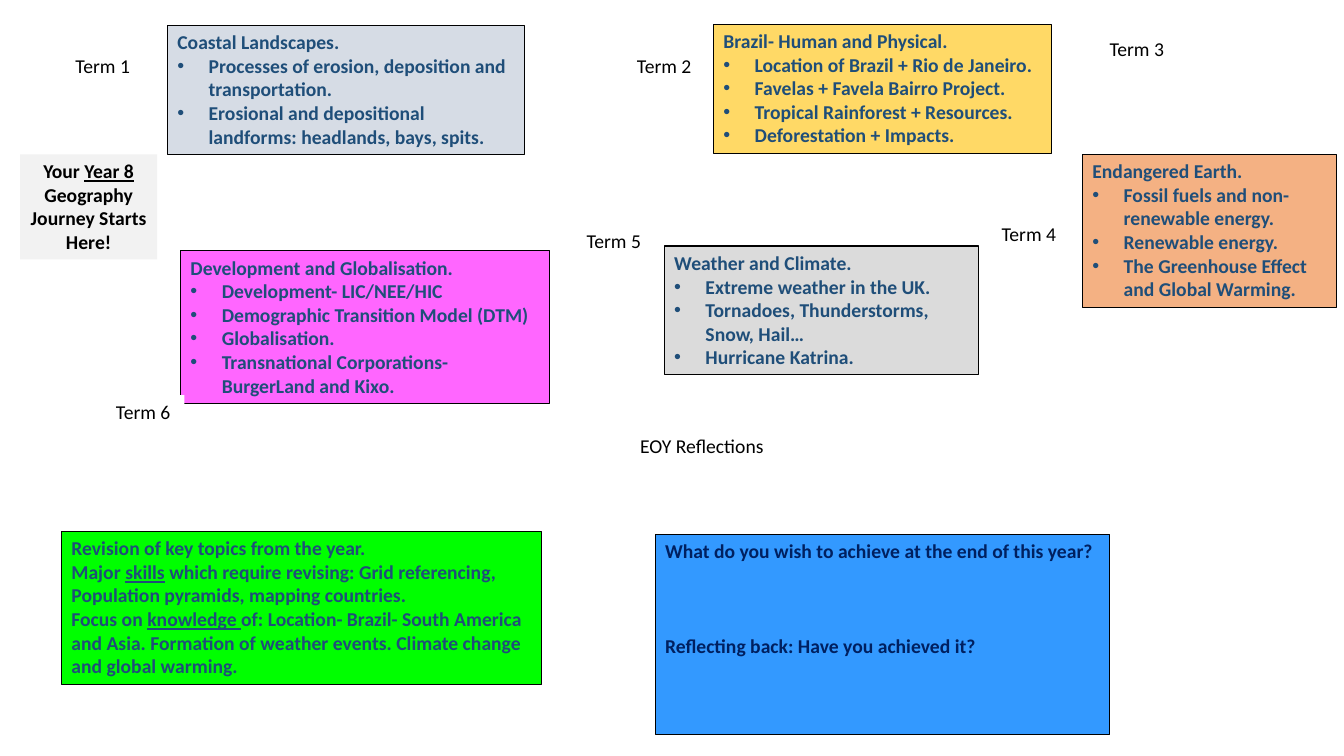
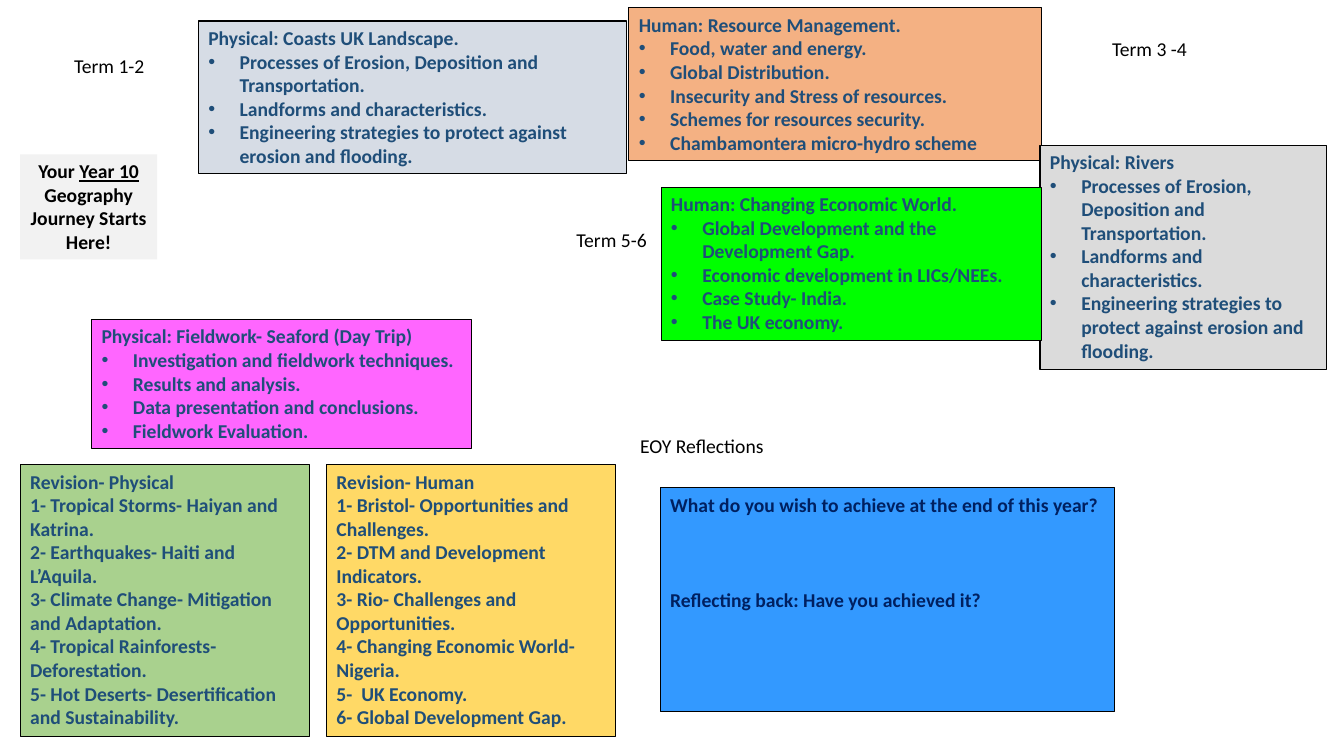
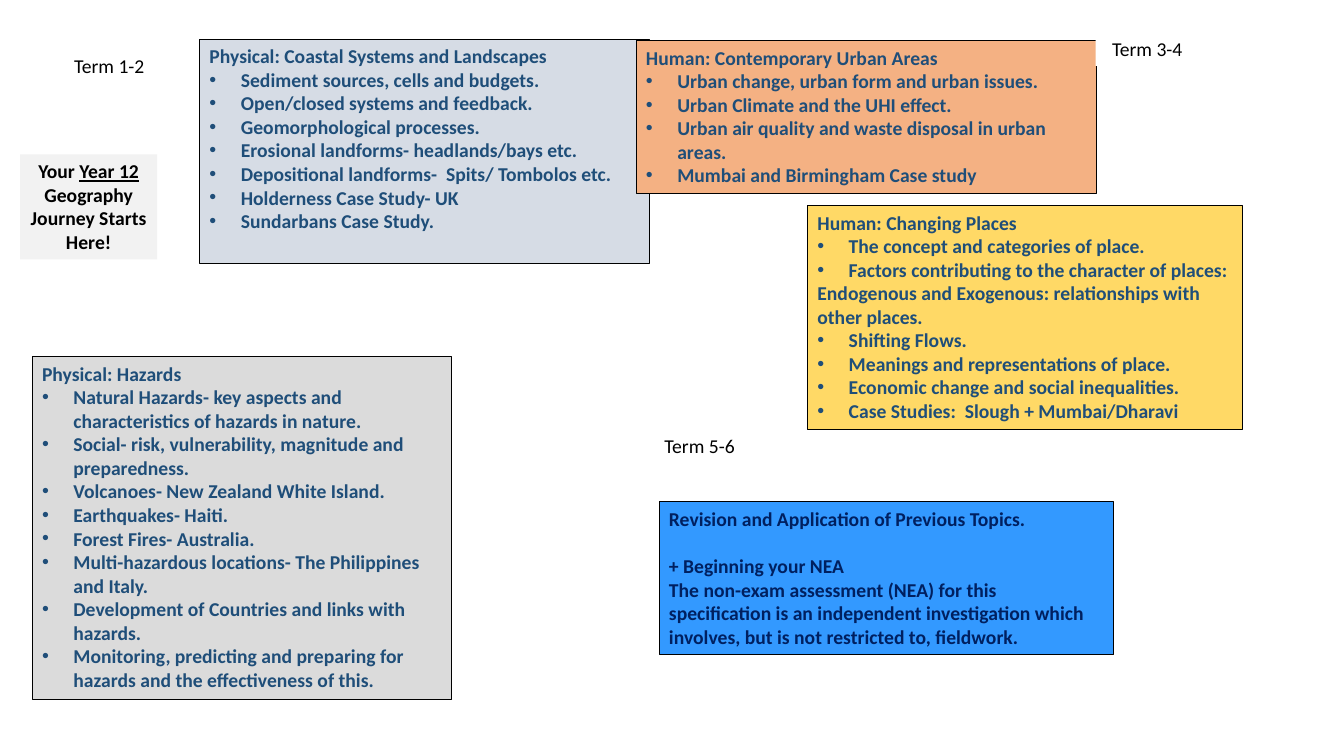
import pptx
import pptx.dml.color
import pptx.enum.shapes
import pptx.enum.text
import pptx.oxml.ns
import pptx.util
from lxml import etree

Cm = pptx.util.Cm
Pt = pptx.util.Pt

COLOURS = {
    "ink": "1F4E79",
    "navy": "002060",
    "black": "000000",
    "white": "FFFFFF",
    "pale": "F2F2F2",
    "steel": "D6DCE5",
    "yellow": "FFD966",
    "orange": "F4B183",
    "grey": "DBDBDB",
    "pink": "FF66FF",
    "lime": "00FF00",
    "green": "A9D18E",
    "blue": "3399FF",
}


class Journey:
    font = "Calibri"
    size = Pt(14)
    line_height = 0.6
    padding = 0.25
    blank_line = 17
    indent = Cm(0.79)

    def __init__(self):
        self.presentation = pptx.Presentation()
        self.presentation.slide_width = Cm(33.87)
        self.presentation.slide_height = Cm(19.05)
        self.slide = None

    def rgb(self, name):
        return pptx.dml.color.RGBColor.from_string(COLOURS[name])

    def start(self, year):
        self.slide = self.presentation.slides.add_slide(self.presentation.slide_layouts[6])
        frame = self.box("pale", 0.51, 3.89, 3.45, 4, border=False)
        text = ("Your ", f"Year {year} ", "Geography Journey Starts Here!")
        self.add_text(frame, text, "black", centred=True)

    def box(self, fill, left, top, width, lines, border=True):
        height = self.padding + self.line_height * lines
        shape = self.slide.shapes.add_shape(
            pptx.enum.shapes.MSO_SHAPE.RECTANGLE, Cm(left), Cm(top), Cm(width), Cm(height))
        shape.shadow.inherit = False
        shape.fill.solid()
        shape.fill.fore_color.rgb = self.rgb(fill)
        if border:
            shape.line.color.rgb = self.rgb("black")
            shape.line.width = Pt(0.75)
        else:
            shape.line.fill.background()
        frame = shape.text_frame
        frame.word_wrap = True
        frame.vertical_anchor = pptx.enum.text.MSO_ANCHOR.TOP
        return frame

    def add_text(self, frame, text, colour="ink", bold=True, centred=False, bullet=False, gap=0):
        paragraph = frame.paragraphs[0]
        if paragraph.runs:
            paragraph = frame.add_paragraph()
        align = pptx.enum.text.PP_ALIGN
        paragraph.alignment = align.CENTER if centred else align.LEFT
        if gap:
            paragraph.space_before = Pt(gap * self.blank_line)
        if bullet:
            self.add_bullet(paragraph)
        pieces = (text,) if isinstance(text, str) else text
        for position, piece in enumerate(pieces):
            run = paragraph.add_run()
            run.text = piece
            run.font.name = self.font
            run.font.size = self.size
            run.font.bold = bold
            run.font.color.rgb = self.rgb(colour)
            if position % 2:
                run.font.underline = True

    def add_bullet(self, paragraph):
        properties = paragraph._p.get_or_add_pPr()
        properties.set("marL", str(self.indent))
        properties.set("indent", str(-self.indent))
        qn = pptx.oxml.ns.qn
        etree.SubElement(properties, qn("a:buFont")).set("typeface", "Arial")
        etree.SubElement(properties, qn("a:buChar")).set("char", "•")

    def bullets(self, frame, *items):
        for item in items:
            self.add_text(frame, item, bullet=True)

    def topic(self, fill, left, top, width, lines, heading, *items):
        frame = self.box(fill, left, top, width, lines)
        self.add_text(frame, heading)
        self.bullets(frame, *items)
        return frame

    def revision(self, fill, left, top, width, lines, *texts):
        frame = self.box(fill, left, top, width, lines)
        for text in texts:
            self.add_text(frame, text)

    def goal(self, left, top, lines, *entries):
        frame = self.box("blue", left, top, 11.46, lines)
        for gap, text in entries:
            self.add_text(frame, text, "navy", gap=gap)

    def reflections(self, left, top, lines):
        self.goal(left, top, lines,
                  (0, "What do you wish to achieve at the end of this year?"),
                  (3, "Reflecting back: Have you achieved it?"))
        self.label("EOY Reflections", 15.85, 10.82, 3.68)

    def label(self, text, left, top, width=2.08):
        frame = self.box("white", left, top, width, 1, border=False)
        self.add_text(frame, text, "black", bold=False, centred=True)


def year_8(journey):
    journey.start(8)
    journey.topic("steel", 4.22, 0.64, 8.99, 5, "Coastal Landscapes.",
                  "Processes of erosion, deposition and transportation.",
                  "Erosional and depositional landforms: headlands, bays, spits.")
    journey.topic("yellow", 17.98, 0.61, 8.51, 5, "Brazil- Human and Physical.",
                  "Location of Brazil + Rio de Janeiro.",
                  "Favelas + Favela Bairro Project.",
                  "Tropical Rainforest + Resources.",
                  "Deforestation + Impacts.")
    journey.topic("orange", 27.28, 3.89, 6.4, 6, "Endangered Earth.",
                  "Fossil fuels and non-renewable energy.",
                  "Renewable energy.",
                  "The Greenhouse Effect and Global Warming.")
    journey.topic("grey", 16.74, 6.2, 7.92, 5, "Weather and Climate.",
                  "Extreme weather in the UK.",
                  "Tornadoes, Thunderstorms, Snow, Hail…",
                  "Hurricane Katrina.")
    journey.topic("pink", 4.55, 6.32, 9.3, 6, "Development and Globalisation.",
                  "Development- LIC/NEE/HIC",
                  "Demographic Transition Model (DTM)",
                  "Globalisation.",
                  "Transnational Corporations- BurgerLand and Kixo.")
    journey.revision("lime", 1.55, 13.39, 12.09, 6,
                     "Revision of key topics from the year.",
                     ("Major ", "skills", " which require revising: Grid referencing, "
                      "Population pyramids, mapping countries."),
                     ("Focus on ", "knowledge ", "of: Location- Brazil- South America and Asia. "
                      "Formation of weather events. Climate change and global warming."))
    journey.reflections(16.51, 13.46, 8)
    places = [(1.55, 1.24), (15.7, 1.24), (27.61, 0.81),
              (24.89, 5.46), (14.43, 5.64), (2.57, 9.96)]
    for term, (left, top) in enumerate(places, 1):
        journey.label(f"Term {term}", left, top)


def year_10(journey):
    journey.start(10)
    river_and_coast = ("Processes of Erosion, Deposition and Transportation.",
                       "Landforms and characteristics.",
                       "Engineering strategies to protect against erosion and flooding.")
    journey.topic("steel", 5, 0.53, 10.8, 6, "Physical: Coasts UK Landscape.", *river_and_coast)
    journey.topic("orange", 15.85, 0.2, 10.39, 6, "Human: Resource Management.",
                  "Food, water and energy.",
                  "Global Distribution.",
                  "Insecurity and Stress of resources.",
                  "Schemes for resources security.",
                  "Chambamontera micro-hydro scheme")
    journey.topic("grey", 26.21, 3.66, 7.21, 9, "Physical: Rivers", *river_and_coast)
    journey.topic("pink", 2.31, 8.05, 9.58, 5, "Physical: Fieldwork- Seaford (Day Trip)",
                  "Investigation and fieldwork techniques.",
                  "Results and analysis.",
                  "Data presentation and conclusions.",
                  "Fieldwork Evaluation.")
    journey.topic("lime", 16.66, 4.72, 9.58, 6, "Human: Changing Economic World.",
                  "Global Development and the Development Gap.",
                  "Economic development in LICs/NEEs.",
                  "Case Study- India.",
                  "The UK economy.")
    journey.reflections(16.64, 12.29, 9)
    journey.label("Term 1-2", 1.55, 1.24, 2.41)
    journey.label("Term 3 -4", 27.61, 0.81, 2.72)
    journey.label("Term 5-6", 14.22, 5.61, 2.39)
    journey.revision("green", 0.51, 11.71, 7.29, 11,
                     "Revision- Physical",
                     "1- Tropical Storms- Haiyan and Katrina.",
                     "2- Earthquakes- Haiti and L’Aquila.",
                     "3- Climate Change- Mitigation and Adaptation.",
                     "4- Tropical Rainforests- Deforestation.",
                     "5- Hot Deserts- Desertification and Sustainability.")
    journey.revision("yellow", 8.23, 11.71, 7.29, 11,
                     "Revision- Human",
                     "1- Bristol- Opportunities and Challenges.",
                     "2- DTM and Development Indicators.",
                     "3- Rio- Challenges and Opportunities.",
                     "4- Changing Economic World- Nigeria.",
                     "5-  UK Economy.",
                     "6- Global Development Gap.")


def year_12(journey):
    journey.start(12)
    journey.topic("steel", 5.03, 0.99, 11.33, 9, "Physical: Coastal Systems and Landscapes",
                  "Sediment sources, cells and budgets.",
                  "Open/closed systems and feedback.",
                  "Geomorphological processes.",
                  "Erosional landforms- headlands/bays etc.",
                  "Depositional landforms-  Spits/ Tombolos etc.",
                  "Holderness Case Study- UK",
                  "Sundarbans Case Study.")
    places = journey.topic("yellow", 20.35, 5.18, 10.97, 9, "Human: Changing Places",
                           "The concept and categories of place.",
                           "Factors contributing to the character of places:")
    journey.add_text(places, "Endogenous and Exogenous: relationships with other places.")
    journey.bullets(places,
                    "Shifting Flows.",
                    "Meanings and representations of place.",
                    "Economic change and social inequalities.",
                    "Case Studies:  Slough + Mumbai/Dharavi")
    journey.topic("orange", 16.03, 1.02, 11.61, 6, "Human: Contemporary Urban Areas",
                  "Urban change, urban form and urban issues.",
                  "Urban Climate and the UHI effect.",
                  "Urban air quality and waste disposal in urban areas.",
                  "Mumbai and Birmingham Case study")
    journey.topic("grey", 0.81, 8.99, 10.57, 14, "Physical: Hazards",
                  "Natural Hazards- key aspects and characteristics of hazards in nature.",
                  "Social- risk, vulnerability, magnitude and preparedness.",
                  "Volcanoes- New Zealand White Island.",
                  "Earthquakes- Haiti.",
                  "Forest Fires- Australia.",
                  "Multi-hazardous locations- The Philippines and Italy.",
                  "Development of Countries and links with hazards.",
                  "Monitoring, predicting and preparing for hazards and the effectiveness of this.")
    journey.goal(16.61, 12.65, 6,
                 (0, "Revision and Application of Previous Topics."),
                 (1, "+ Beginning your NEA"),
                 (0, "The non-exam assessment (NEA) for this specification is an independent "
                     "investigation which involves, but is not restricted to, fieldwork."))
    journey.label("Term 1-2", 1.55, 1.24, 2.41)
    journey.label("Term 3-4 ", 27.61, 0.81, 2.72)
    journey.label("Term 5-6 ", 15.85, 10.82, 3.68)


def main():
    journey = Journey()
    year_8(journey)
    year_10(journey)
    year_12(journey)
    journey.presentation.save("out.pptx")


if __name__ == "__main__":
    main()
